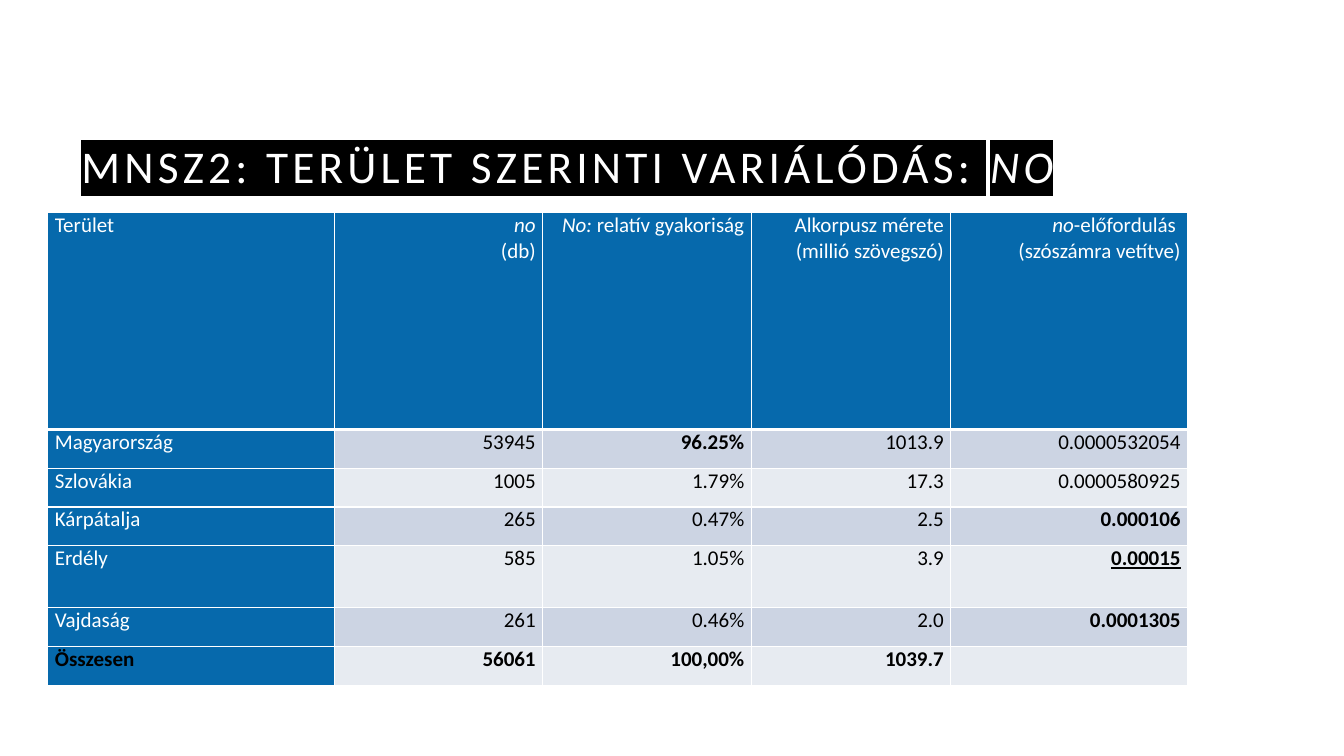
from lxml import etree
from pptx import Presentation
from pptx.dml.color import RGBColor
from pptx.enum.text import MSO_ANCHOR, PP_ALIGN
from pptx.oxml.ns import qn
from pptx.util import Emu, Pt

PX = 914400 // 200
LEFT, RIGHT = PP_ALIGN.LEFT, PP_ALIGN.RIGHT
BOTTOM = MSO_ANCHOR.BOTTOM
WHITE = RGBColor(0xFF, 0xFF, 0xFF)
BLACK = RGBColor(0, 0, 0)
BLUE = RGBColor(0x06, 0x69, 0xAC)
BAND_DARK = RGBColor(0xCC, 0xD4, 0xE3)
BAND_LIGHT = RGBColor(0xE7, 0xEB, 0xF1)


def add_run(p, text, size=15, color=BLACK, style=""):
    r = p.add_run()
    r.text = text
    r.font.name = "Calibri"
    r.font.size = Pt(size)
    r.font.color.rgb = color
    r.font.bold = "b" in style
    r.font.italic = "i" in style
    r.font.underline = "u" in style
    return r


def add_border(cell, side, width):
    ln = etree.SubElement(cell._tc.get_or_add_tcPr(), qn(f"a:ln{side}"), w=str(Pt(width)))
    fill = etree.SubElement(ln, qn("a:solidFill"))
    etree.SubElement(fill, qn("a:srgbClr"), val=str(WHITE))


prs = Presentation()
prs.slide_width = Emu(2667 * PX)
prs.slide_height = Emu(1500 * PX)
slide = prs.slides.add_slide(prs.slide_layouts[6])

title = slide.shapes.add_textbox(142 * PX, 142 * PX, 2324 * PX, 250 * PX)
tf = title.text_frame
tf.word_wrap = True
tf.vertical_anchor = BOTTOM
p = tf.paragraphs[0]
p.line_spacing = 1.2
for text, style in [("MNSZ2: TERÜLET SZERINTI VARIÁLÓDÁS: ", ""), ("NO", "i")]:
    r = add_run(p, text, size=32.4, color=WHITE, style=style)
    rPr = r.font._element
    rPr.set("spc", "300")
    highlight = etree.Element(qn("a:highlight"))
    etree.SubElement(highlight, qn("a:srgbClr"), val=str(BLACK))
    rPr.find(qn("a:solidFill")).addnext(highlight)

header = [
    [[("Terület", "")]],
    [[("no", "i")], [("(db)", "")]],
    [[("No: ", "i"), ("relatív gyakoriság", "")]],
    [[("Alkorpusz mérete (millió szövegszó)", "")]],
    [[("no", "i"), ("-előfordulás ", "")], [("(szószámra vetítve)", "")]],
]
data = [
    ["Magyarország", "53945", "96.25%", "1013.9", "0.0000532054"],
    ["Szlovákia", "1005", "1.79%", "17.3", "0.0000580925"],
    ["Kárpátalja", "265", "0.47%", "2.5", "0.000106"],
    ["Erdély", "585", "1.05%", "3.9", "0.00015"],
    ["Vajdaság", "261", "0.46%", "2.0", "0.0001305"],
    ["Összesen", "56061", "100,00%", "1039.7", ""],
]
emphasis = {"96.25%": "b", "0.000106": "b", "0.00015": "bu", "0.0001305": "b"}
emphasis.update((text, "b") for text in data[-1])
rows = [header] + [[[[(text, emphasis.get(text, ""))]] for text in row] for row in data]

col_widths = [568, 414, 414, 396, 470]
row_heights = [430, 77, 77, 77, 123, 77, 77]
table = slide.shapes.add_table(len(rows), len(col_widths), 95 * PX, 422 * PX,
                               sum(col_widths) * PX, sum(row_heights) * PX).table
table.horz_banding = False
for column, width in zip(table.columns, col_widths):
    column.width = Emu(width * PX)
for row, height in zip(table.rows, row_heights):
    row.height = Emu(height * PX)

for i, row in enumerate(rows):
    for j, paragraphs in enumerate(row):
        cell = table.cell(i, j)
        cell.margin_left = cell.margin_right = Emu(14 * PX)
        cell.margin_top = cell.margin_bottom = 0
        for side in "LRTB":
            add_border(cell, side, 3 if i == 0 and side == "B" else 1)
        cell.fill.solid()
        band = BAND_DARK if i % 2 else BAND_LIGHT
        cell.fill.fore_color.rgb = BLUE if i == 0 or j == 0 else band
        color = WHITE if i == 0 or (j == 0 and i < len(data)) else BLACK
        tf = cell.text_frame
        for k, runs in enumerate(paragraphs):
            p = tf.add_paragraph() if k else tf.paragraphs[0]
            p.alignment = RIGHT if j else LEFT
            for text, style in runs:
                if text:
                    add_run(p, text, color=color, style=style)

prs.save("out.pptx")
